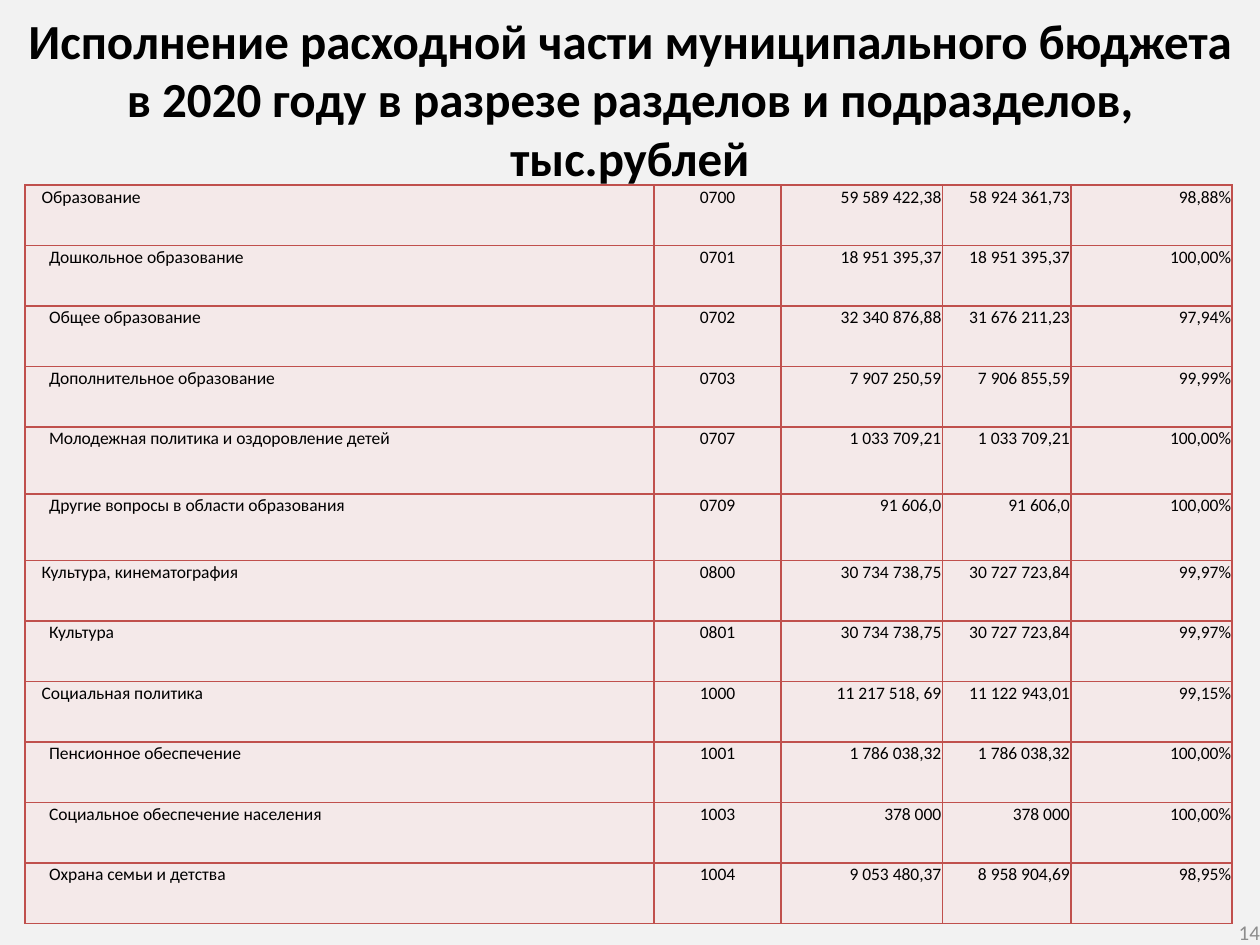
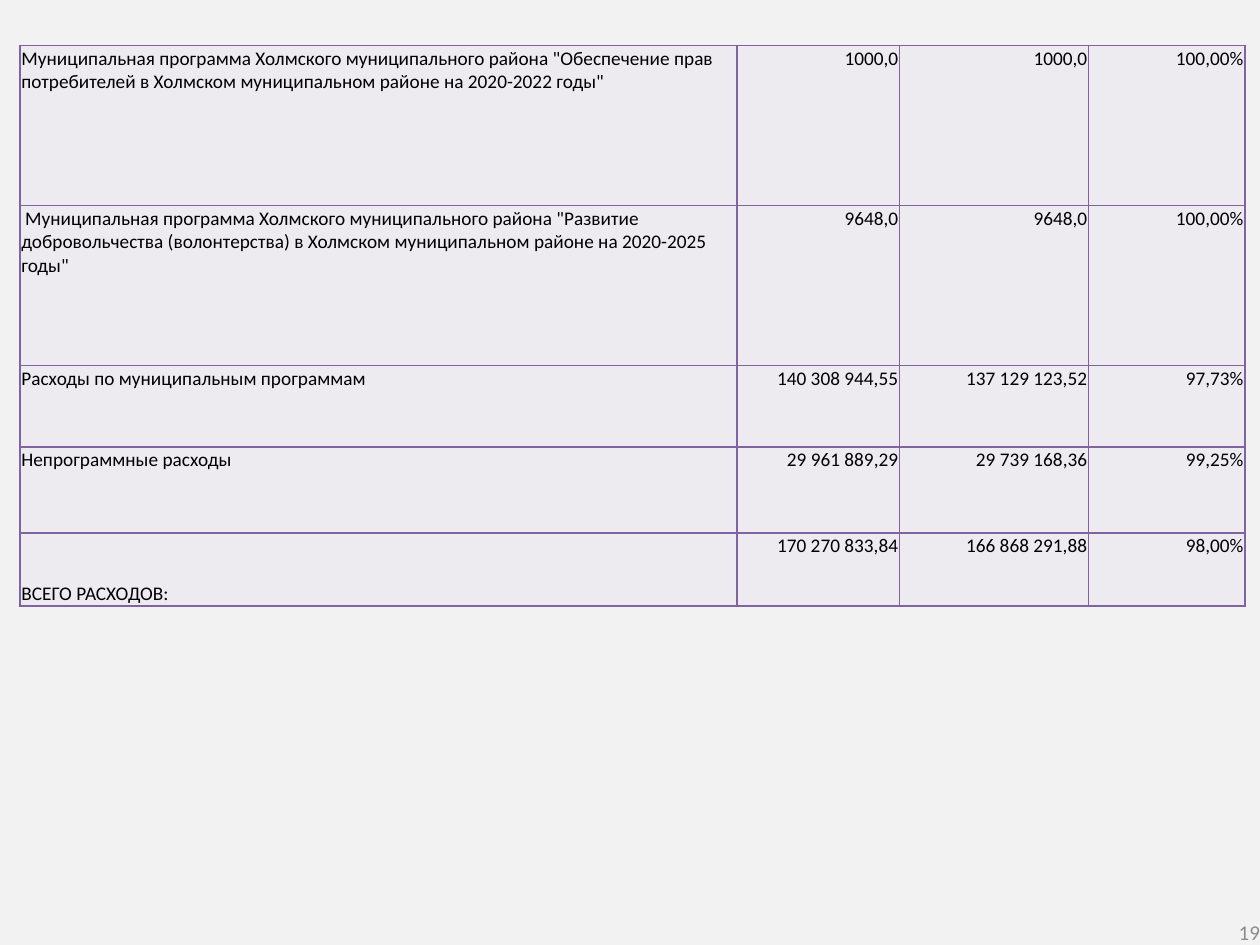
from lxml import etree
from pptx import Presentation
from pptx.dml.color import RGBColor
from pptx.enum.text import MSO_ANCHOR, MSO_AUTO_SIZE, PP_ALIGN
from pptx.oxml.ns import qn
from pptx.util import Inches, Pt

LEFT, CENTER, RIGHT = PP_ALIGN.LEFT, PP_ALIGN.CENTER, PP_ALIGN.RIGHT
TOP, MIDDLE, BOTTOM = MSO_ANCHOR.TOP, MSO_ANCHOR.MIDDLE, MSO_ANCHOR.BOTTOM
GROW = MSO_AUTO_SIZE.SHAPE_TO_FIT_TEXT
FIXED = MSO_AUTO_SIZE.NONE

FONT = "Calibri"
COLORS = {
    "background": "F2F2F2",
    "text": "000000",
    "number": "8C8C8C",
    "section_line": "C0504D",
    "section_fill": "F4E9E9",
    "program_line": "8064A2",
    "program_fill": "EDEAF0",
}
CELL_MARGIN = 0.01
SECTION_INDENT, SUBSECTION_INDENT = 0.13, 0.19

TITLE = ("Исполнение расходной части муниципального бюджета "
         "в 2020 году в разрезе разделов и подразделов, тыс.рублей")

# Name, code, plan, actual, share; codes ending in 00 are sections
SECTIONS = [
    ("Образование", "0700", "59 589 422,38", "58 924 361,73", "98,88%"),
    ("Дошкольное образование", "0701", "18 951 395,37", "18 951 395,37", "100,00%"),
    ("Общее образование", "0702", "32 340 876,88", "31 676 211,23", "97,94%"),
    ("Дополнительное образование", "0703", "7 907 250,59", "7 906 855,59", "99,99%"),
    ("Молодежная политика и оздоровление детей", "0707",
     "1 033 709,21", "1 033 709,21", "100,00%"),
    ("Другие вопросы в области образования", "0709", "91 606,0", "91 606,0", "100,00%"),
    ("Культура, кинематография", "0800", "30 734 738,75", "30 727 723,84", "99,97%"),
    ("Культура", "0801", "30 734 738,75", "30 727 723,84", "99,97%"),
    ("Социальная политика", "1000", "11 217 518, 69", "11 122 943,01", "99,15%"),
    ("Пенсионное обеспечение", "1001", "1 786 038,32", "1 786 038,32", "100,00%"),
    ("Социальное обеспечение населения", "1003", "378 000", "378 000", "100,00%"),
    ("Охрана семьи и детства", "1004", "9 053 480,37", "8 958 904,69", "98,95%"),
]

# Name, plan, actual, share
PROGRAMS = [
    ('Муниципальная программа Холмского муниципального района "Обеспечение прав '
     'потребителей в Холмском муниципальном районе на 2020-2022 годы"',
     "1000,0", "1000,0", "100,00%"),
    ('Муниципальная программа Холмского муниципального района "Развитие '
     'добровольчества (волонтерства) в Холмском муниципальном районе на 2020-2025 годы"',
     "9648,0", "9648,0", "100,00%"),
    ("Расходы по муниципальным программам", "140 308 944,55", "137 129 123,52", "97,73%"),
    ("Непрограммные расходы", "29 961 889,29", "29 739 168,36", "99,25%"),
    ("ВСЕГО РАСХОДОВ:", "170 270 833,84", "166 868 291,88", "98,00%"),
]


def set_all(target, values):
    for name, value in values.items():
        setattr(target, name, value)


def write(para, text, size, color="text", align=LEFT, bold=False):
    para.alignment = align
    span = para.add_run()
    span.text = text
    set_all(span.font, {"name": FONT, "size": Pt(size), "bold": bold})
    span.font.color.rgb = RGBColor.from_string(COLORS[color])


def add_text(page, box, text, margins, frame_format, **text_format):
    frame = page.shapes.add_textbox(*map(Inches, box)).text_frame
    sides = ("margin_left", "margin_top", "margin_right", "margin_bottom")
    set_all(frame, dict(zip(sides, map(Inches, margins))))
    set_all(frame, {"word_wrap": True, **frame_format})
    write(frame.paragraphs[0], text, **text_format)


def add_title(page, box, text):
    add_text(page, box, text, (0.1, 0.08, 0.1, 0.05),
             {"vertical_anchor": TOP, "auto_size": GROW},
             size=28, align=CENTER, bold=True)


def add_page_number(page, box, number):
    add_text(page, box, str(number), (0, 0, 0, 0),
             {"vertical_anchor": MIDDLE, "auto_size": FIXED},
             size=12, color="number", align=RIGHT)


def style_cell(cell, theme):
    # Borders come before the fill in the cell properties
    properties = cell._tc.get_or_add_tcPr()
    for side in ("lnL", "lnR", "lnT", "lnB"):
        line = etree.SubElement(properties, qn(f"a:{side}"), w=str(Pt(1)))
        fill = etree.SubElement(line, qn("a:solidFill"))
        etree.SubElement(fill, qn("a:srgbClr"), val=COLORS[f"{theme}_line"])
    cell.fill.solid()
    cell.fill.fore_color.rgb = RGBColor.from_string(COLORS[f"{theme}_fill"])
    margin = Inches(CELL_MARGIN)
    set_all(cell, {"margin_left": margin, "margin_top": margin, "margin_right": margin,
                   "margin_bottom": 0, "vertical_anchor": TOP})


def add_budget_table(page, box, rows, widths, heights, aligns, theme, size):
    table = page.shapes.add_table(len(rows), len(widths), *map(Inches, box)).table
    set_all(table, {"first_row": False, "horz_banding": False})
    for column, width in zip(table.columns, widths):
        column.width = Inches(width)
    for row, height, values in zip(table.rows, heights, rows):
        row.height = Inches(height)
        for cell, value, align in zip(row.cells, values, aligns):
            style_cell(cell, theme)
            write(cell.text_frame.paragraphs[0], value, size, align=align)
    return table


def new_page(deck, number):
    page = deck.slides.add_slide(deck.slide_layouts[6])
    page.background.fill.solid()
    page.background.fill.fore_color.rgb = RGBColor.from_string(COLORS["background"])
    add_page_number(page, (7.67, 7.29, 2.33, 0.21), number)
    return page


def add_sections_page(deck):
    page = new_page(deck, 14)
    add_title(page, (0, 0, 10, 1.54), TITLE)
    heights = [0.48] * 4 + [0.53] * 2 + [0.48] * 6
    table = add_budget_table(page, (0.2, 1.47, 9.57, 5.91), SECTIONS,
                             (4.99, 1.01, 1.28, 1.02, 1.28), heights,
                             (LEFT, CENTER, RIGHT, RIGHT, RIGHT), "section", 10)
    # Subsections stand further in than sections
    for row, values in zip(table.rows, SECTIONS):
        indent = SECTION_INDENT if values[1].endswith("00") else SUBSECTION_INDENT
        row.cells[0].margin_left = Inches(indent)


def add_programs_page(deck):
    page = new_page(deck, 19)
    table = add_budget_table(page, (0.16, 0.36, 9.73, 4.45), PROGRAMS,
                             (5.69, 1.29, 1.5, 1.24), (1.27, 1.27, 0.65, 0.68, 0.58),
                             (LEFT, RIGHT, RIGHT, RIGHT), "program", 11)
    # The second name starts slightly in; the total sits at the bottom
    para = table.cell(1, 0).text_frame.paragraphs[0]
    para._p.get_or_add_pPr().set("indent", str(Inches(0.03)))
    table.cell(len(PROGRAMS) - 1, 0).vertical_anchor = BOTTOM


def main():
    deck = Presentation()
    set_all(deck, {"slide_width": Inches(10), "slide_height": Inches(7.5)})
    add_sections_page(deck)
    add_programs_page(deck)
    deck.save("out.pptx")


if __name__ == "__main__":
    main()
